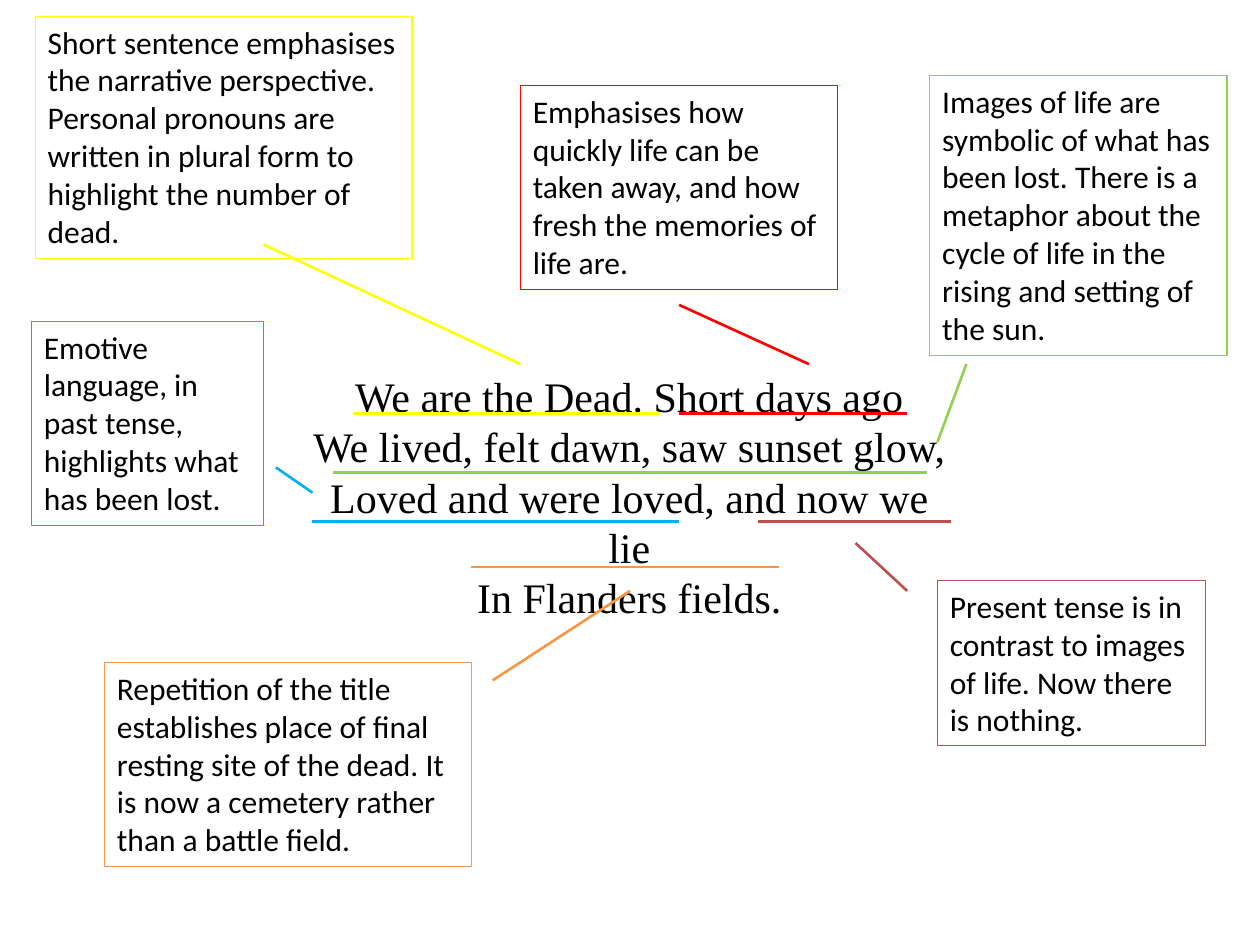
import pptx
import pptx.util
import pptx.dml.color
import pptx.enum.shapes
import pptx.enum.text
import pptx.oxml.ns
import lxml.etree

Inches = pptx.util.Inches
Pt = pptx.util.Pt
Color = pptx.dml.color.RGBColor.from_string
Align = pptx.enum.text.PP_ALIGN

THEME = {
    "ink": "000000", "yellow": "FFFF00", "red": "FF0000", "green": "92D050",
    "blue": "00B0F0", "brick": "C0504D", "orange": "F79646",
    "poem": 24, "note": 18, "rule": 1.5, "edge": 0.75,
    "serif": "Times New Roman", "sans": "Calibri",
}


def put_text(box, text, size=THEME["note"], face=THEME["sans"], align=Align.LEFT):
    frame = box.text_frame
    frame.word_wrap = True
    frame.auto_size = pptx.enum.text.MSO_AUTO_SIZE.SHAPE_TO_FIT_TEXT
    frame.vertical_anchor = pptx.enum.text.MSO_ANCHOR.TOP
    para = frame.paragraphs[0]
    para.alignment = align
    para.text = text
    for run in para.runs:
        run.font.size = Pt(size)
        run.font.name = face
        run.font.color.rgb = Color(THEME["ink"])


def draw_line(shapes, ends, hue):
    line = shapes.add_connector(
        pptx.enum.shapes.MSO_CONNECTOR.STRAIGHT, *[Inches(n) for n in ends])
    line.line.color.rgb = Color(hue)
    line.line.width = Pt(THEME["rule"])
    lxml.etree.SubElement(line._element.spPr, pptx.oxml.ns.qn("a:effectLst"))


deck = pptx.Presentation()
deck.slide_width, deck.slide_height = Inches(10), Inches(7.5)
shapes = deck.slides.add_slide(deck.slide_layouts[6]).shapes

# Poem in the centre; \v is a line break
poem = shapes.add_textbox(Inches(2.33), Inches(2.89), Inches(5.33), Inches(1.72))
put_text(poem, "We are the Dead. Short days ago\v"
               "We lived, felt dawn, saw sunset glow,\v"
               "Loved and were loved, and now we lie\v"
               "In Flanders fields.",
         size=THEME["poem"], face=THEME["serif"], align=Align.CENTER)

# Each note: colour, underline (left, right, height), pointer ends, box, text
notes = [
    ("yellow", (2.8, 5.24, 3.28), (2.09, 1.94, 4.13, 2.89), (0.28, 0.13, 2.99, 1.92),
     "Short sentence emphasises the narrative perspective. Personal pronouns are "
     "written in plural form to highlight the number of dead."),
    ("red", (5.39, 7.2, 3.28), (5.39, 2.42, 6.42, 2.89), (4.13, 0.68, 2.52, 1.62),
     "Emphasises how quickly life can be taken away, and how fresh the memories "
     "of life are."),
    ("green", (2.64, 7.36, 3.75), (7.44, 3.51, 7.67, 2.89), (7.38, 0.6, 2.36, 2.22),
     "Images of life are symbolic of what has been lost. There is a metaphor about "
     "the cycle of life in the rising and setting of the sun."),
    ("blue", (2.48, 5.39, 4.14), (2.19, 3.71, 2.48, 3.91), (0.25, 2.55, 1.84, 1.62),
     "Emotive language, in past tense, highlights what has been lost."),
    ("brick", (6.02, 7.55, 4.14), (6.79, 4.31, 7.2, 4.69), (7.44, 4.61, 2.13, 1.31),
     "Present tense is in contrast to images of life. Now there is nothing."),
    ("orange", (3.74, 6.18, 4.5), (3.91, 5.4, 5, 4.69), (0.83, 5.26, 2.91, 1.62),
     "Repetition of the title establishes place of final resting site of the dead. "
     "It is now a cemetery rather than a battle field."),
]

for name, (left, right, base), ends, place, text in notes:
    hue = THEME[name]
    # Underline and pointer
    draw_line(shapes, (left, base, right, base), hue)
    draw_line(shapes, ends, hue)
    # Outlined note
    box = shapes.add_shape(pptx.enum.shapes.MSO_SHAPE.RECTANGLE,
                           *[Inches(n) for n in place])
    box.shadow.inherit = False
    box.fill.background()
    box.line.color.rgb = Color(hue)
    box.line.width = Pt(THEME["edge"])
    put_text(box, text)

deck.save("out.pptx")
